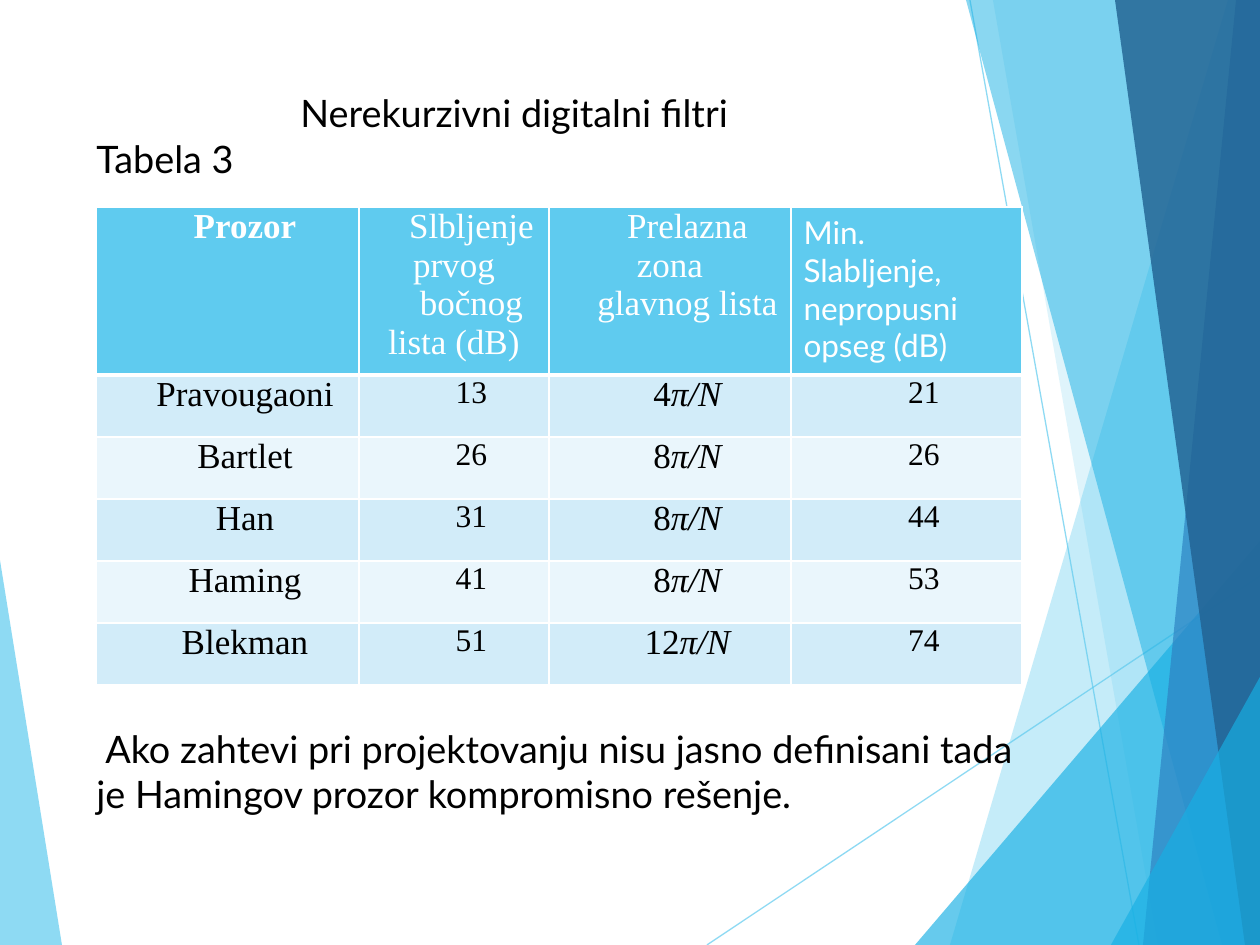
from lxml import etree
from pptx import Presentation
from pptx import util as u
from pptx.dml.color import RGBColor
from pptx.enum import text
from pptx.oxml import ns

PX = 914400 // 126
WIDTH, HEIGHT = 1260, 945
COLORS = {
    "sky": "5FCBEF", "cyan": "17B0E4", "blue": "2E83C3", "navy": "226292",
    "odd": "D2ECF9", "even": "EAF6FC", "white": "FFFFFF", "black": "000000",
}


def set_alpha(fill, percent):
    color = fill._xPr.find(".//" + ns.qn("a:srgbClr"))
    etree.SubElement(color, ns.qn("a:alpha"), val=str(percent * 1000))


def style(span, size, color, font, bold=False, italic=False):
    span.font.size = u.Pt(size)
    span.font.color.rgb = RGBColor.from_string(COLORS[color])
    span.font.name = font
    span.font.bold = bold
    span.font.italic = italic


deck = Presentation()
deck.slide_width, deck.slide_height = WIDTH * PX, HEIGHT * PX
page = deck.slides.add_slide(deck.slide_layouts[6])

# Backdrop: a left wedge, two thin lines, then facets reaching the right edge
corner = (WIDTH, HEIGHT)
right_edge = [corner, (WIDTH, 0)]
facets = [
    ([(0, 560), (62, HEIGHT), (0, HEIGHT)], "sky", 70),
    ([(1228, 0), (950, HEIGHT), *right_edge], "sky", 36),
    ([(993, 0), (1158, HEIGHT), *right_edge], "sky", 20),
    ([(915, HEIGHT), (WIDTH, 541), corner], "cyan", 66),
    ([(966, 0), (1222, HEIGHT), *right_edge], "cyan", 50),
    ([(1236, 0), (1143, HEIGHT), *right_edge], "blue", 70),
    ([(1115, 0), (1245, HEIGHT), *right_edge], "navy", 82),
    ([(1111, HEIGHT), (WIDTH, 677), corner], "cyan", 66),
]
for x1, y1, x2, y2 in [(707, HEIGHT, WIDTH, 576), (970, 0, 1139, HEIGHT)]:
    line = page.shapes.add_connector(1, x1 * PX, y1 * PX, x2 * PX, y2 * PX)
    line.line.width = u.Pt(0.75)
    line.line.color.rgb = RGBColor.from_string(COLORS["sky"])
    set_alpha(line.line.fill, 70)
    etree.SubElement(line._element.spPr, ns.qn("a:effectLst"))
for points, color, opacity in facets:
    outline = page.shapes.build_freeform(*points[0], scale=PX)
    outline.add_line_segments(points[1:], close=True)
    facet = outline.convert_to_shape()
    facet.shadow.inherit = False
    facet.line.fill.background()
    facet.fill.solid()
    facet.fill.fore_color.rgb = RGBColor.from_string(COLORS[color])
    set_alpha(facet.fill, opacity)

# Title, table caption and the conclusion below the table
box = page.shapes.add_textbox(84 * PX, 84 * PX, 964 * PX, 107 * PX)
frame = box.text_frame
frame.word_wrap = True
frame.vertical_anchor = text.MSO_ANCHOR.TOP
frame.text = (
    "Nerekurzivni digitalni filtri\nTabela 3\n"
    "Ako zahtevi pri projektovanju nisu jasno definisani tada "
    "je Hamingov prozor kompromisno rešenje."
)
title, caption, conclusion = frame.paragraphs
for para in frame.paragraphs:
    style(para.runs[0], 21.6, "sky" if para is title else "black", "Lato",
          italic=para is caption)
title._p.get_or_add_pPr().set("marL", str(204 * PX))
conclusion._p.get_or_add_pPr().set("indent", str(9 * PX))
conclusion.space_before = 545 * PX

# Table of window functions
rows = [
    ["Prozor", "Slbljenje prvog\nbočnog lista (dB)", "Prelazna zona\nglavnog lista",
     "Min. Slabljenje, nepropusni opseg (dB)"],
    ["Pravougaoni", "13", "4π/N", "21"],
    ["Bartlet", "26", "8π/N", "26"],
    ["Han", "31", "8π/N", "44"],
    ["Haming", "41", "8π/N", "53"],
    ["Blekman", "51", "12π/N", "74"],
]
widths = [263, 190, 242, 231]
heights = [163] + [62] * 5
table = page.shapes.add_table(
    len(rows), len(widths), 96 * PX, 207 * PX, sum(widths) * PX, sum(heights) * PX
).table
table.horz_banding = False
for column, width in zip(table.columns, widths):
    column.width = width * PX
for row, height in zip(table.rows, heights):
    row.height = height * PX

for r, values in enumerate(rows):
    header = r == 0
    fill = "sky" if header else "odd" if r % 2 else "even"
    for c, value in enumerate(values):
        cell = table.cell(r, c)
        cell.fill.solid()
        cell.fill.fore_color.rgb = RGBColor.from_string(COLORS[fill])
        plain = header and c == 3
        if not plain:
            cell.margin_left = cell.margin_right = 9 * PX
            cell.margin_top = cell.margin_bottom = 0
        cell.text_frame.text = value
        for para in cell.text_frame.paragraphs:
            if not plain:
                para.alignment = text.PP_ALIGN.CENTER
                para._p.get_or_add_pPr().set("indent", str(35 * PX))
            if not header:
                para.space_after = u.Pt(6)
            size = 18 if plain or (c % 2 and not header) else 20
            number, symbol, rest = para.text.partition("π")
            para.runs[0].text = number
            if symbol:
                para.add_run().text = symbol + rest
            for i, span in enumerate(para.runs):
                style(span, size, "white" if header else "black",
                      "Lato" if plain else "Times New Roman",
                      bold=header and c == 0, italic=i == 1)
        properties = cell._tc.get_or_add_tcPr()
        for i, side in enumerate("LRTB"):
            thick = (header and side == "B") or (r == 1 and side == "T")
            border = etree.Element(ns.qn("a:ln" + side), w=str(u.Pt(3 if thick else 1)))
            solid = etree.SubElement(border, ns.qn("a:solidFill"))
            etree.SubElement(solid, ns.qn("a:srgbClr"), val=COLORS["white"])
            properties.insert(i, border)

deck.save("out.pptx")
